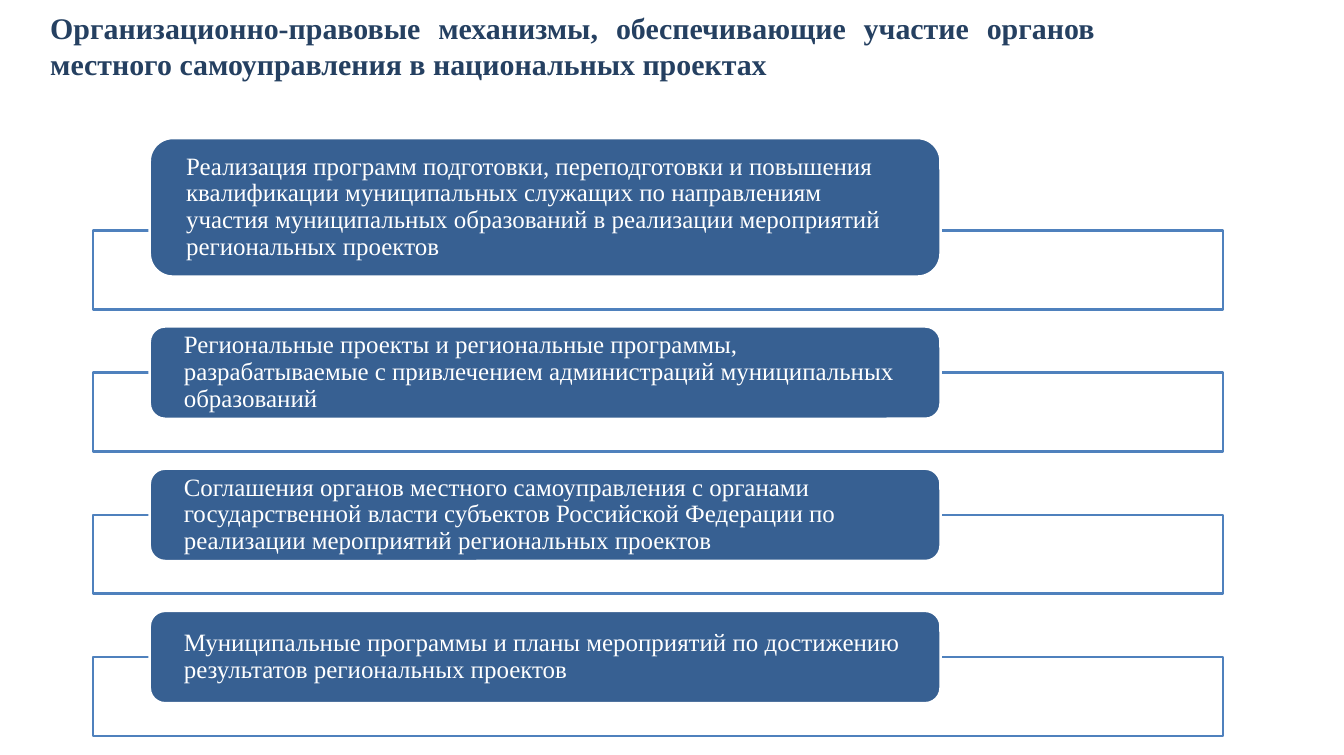
"""Slide on the mechanisms that involve local government in national projects."""
from lxml import etree
from pptx import Presentation
from pptx.dml.color import RGBColor
from pptx.enum.shapes import MSO_SHAPE
from pptx.enum.text import MSO_ANCHOR, MSO_AUTO_SIZE, PP_ALIGN
from pptx.oxml.ns import qn
from pptx.util import Inches, Pt

RECTANGLE, ROUNDED = MSO_SHAPE.RECTANGLE, MSO_SHAPE.ROUNDED_RECTANGLE
TOP, MIDDLE = MSO_ANCHOR.TOP, MSO_ANCHOR.MIDDLE
LEFT, JUSTIFY = PP_ALIGN.LEFT, PP_ALIGN.JUSTIFY
NAVY = RGBColor(0x25, 0x40, 0x61)
CARD_BLUE = RGBColor(0x37, 0x60, 0x92)
FRAME_BLUE = RGBColor(0x4F, 0x81, 0xBD)
WHITE = RGBColor(0xFF, 0xFF, 0xFF)
FONT = "Times New Roman"

FRAME_LEFT, FRAME_WIDTH, FRAME_HEIGHT = 1.04, 12.6, 0.88
CARD_LEFT, CARD_WIDTH, CARD_HEIGHT = 1.67, 8.82, 1.03
FIRST_FRAME_TOP, ROW_PITCH = 2.57, 1.586

MECHANISMS = [
    ("Реализация программ подготовки, переподготовки и повышения квалификации "
     "муниципальных служащих по направлениям участия муниципальных образований "
     "в реализации мероприятий региональных проектов", 1.5 * CARD_HEIGHT),
    ("Региональные проекты и региональные программы, разрабатываемые с привлечением "
     "администраций муниципальных образований", CARD_HEIGHT),
    ("Соглашения органов местного самоуправления с органами государственной власти "
     "субъектов Российской Федерации по реализации мероприятий региональных проектов",
     CARD_HEIGHT),
    ("Муниципальные программы и планы мероприятий по достижению результатов "
     "региональных проектов", CARD_HEIGHT),
]


def add_box(kind, left, top, width, height, fill, line):
    box = slide.shapes.add_shape(
        kind, Inches(left), Inches(top), Inches(width), Inches(height))
    box.shadow.inherit = False
    box.fill.solid()
    box.fill.fore_color.rgb = fill
    box.line.color.rgb = line
    box.line.width = Pt(2)
    return box


def write(holder, text, size, color, bold, align, anchor, side_inset):
    frame = holder.text_frame
    frame.text = text
    frame.word_wrap = True
    frame.auto_size = MSO_AUTO_SIZE.NONE
    frame.vertical_anchor = anchor
    frame.margin_left = frame.margin_right = Inches(side_inset)
    frame.margin_top = frame.margin_bottom = 0
    paragraph = frame.paragraphs[0]
    paragraph.alignment = align
    font = paragraph.runs[0].font
    font.name, font.size, font.bold = FONT, Pt(size), bold
    font.color.rgb = color
    return paragraph


prs = Presentation()
prs.slide_width, prs.slide_height = Inches(14.99), Inches(8.42)
slide = prs.slides.add_slide(prs.slide_layouts[5])

heading = slide.shapes.title
heading.left, heading.top = Inches(0.56), Inches(0.11)
heading.width, heading.height = Inches(11.65), Inches(0.81)
write(heading, "Организационно-правовые механизмы, обеспечивающие участие органов "
      "местного самоуправления в национальных проектах",
      24, NAVY, True, JUSTIFY, TOP, 0).space_after = Pt(10)

for row, (mechanism, card_height) in enumerate(MECHANISMS):
    frame_top = FIRST_FRAME_TOP + row * ROW_PITCH
    card_top = frame_top + CARD_HEIGHT / 2 - card_height
    outline = add_box(RECTANGLE, FRAME_LEFT, frame_top, FRAME_WIDTH, FRAME_HEIGHT,
                      WHITE, FRAME_BLUE)
    fill_color = outline.fill._xPr.find(qn("a:solidFill"))[0]
    etree.SubElement(fill_color, qn("a:alpha"), val="90000")
    card = add_box(ROUNDED, CARD_LEFT, card_top, CARD_WIDTH, card_height,
                   CARD_BLUE, WHITE)
    write(card, mechanism, 20, WHITE, False, LEFT, MIDDLE, 0.33).line_spacing = 0.9

prs.save("out.pptx")
